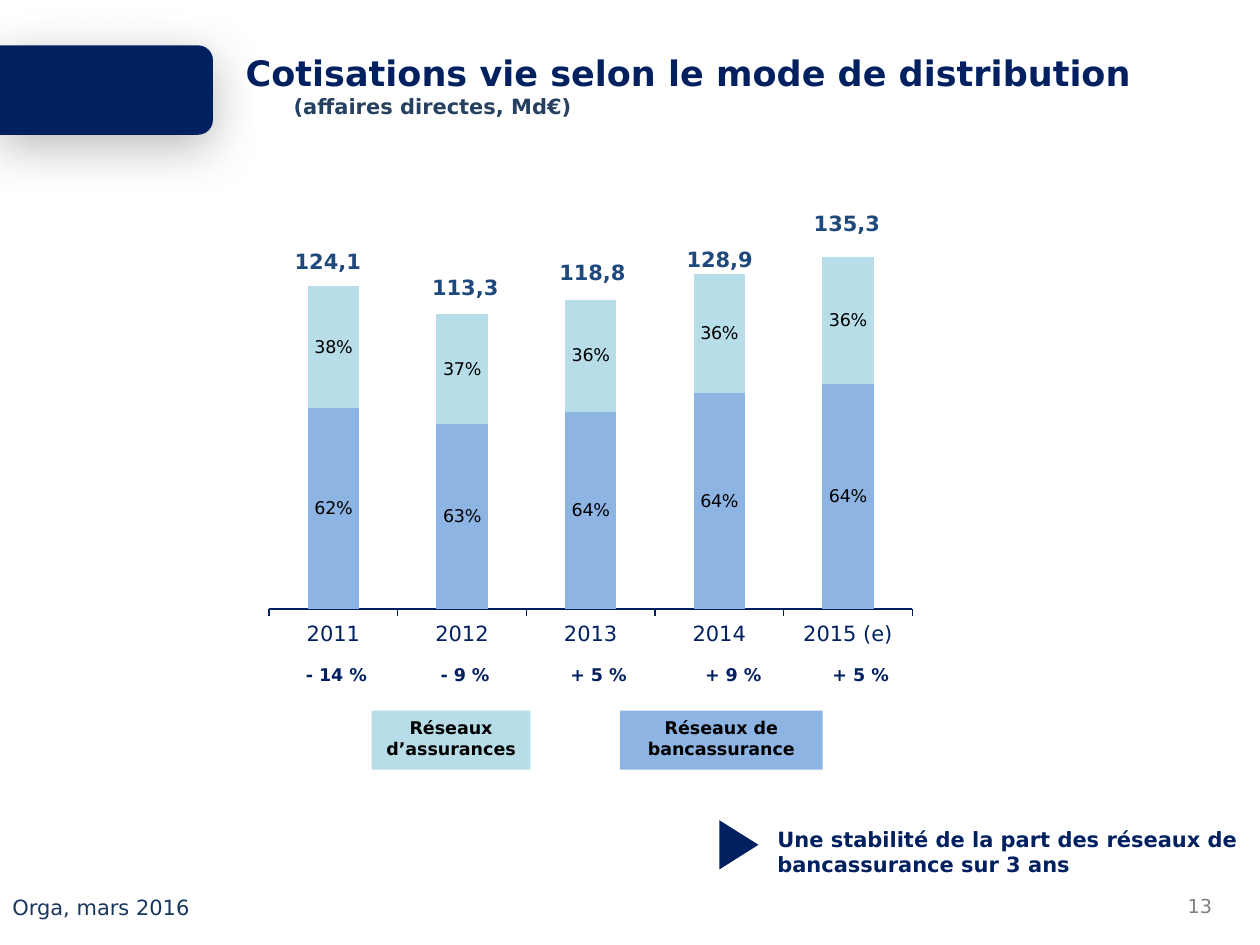
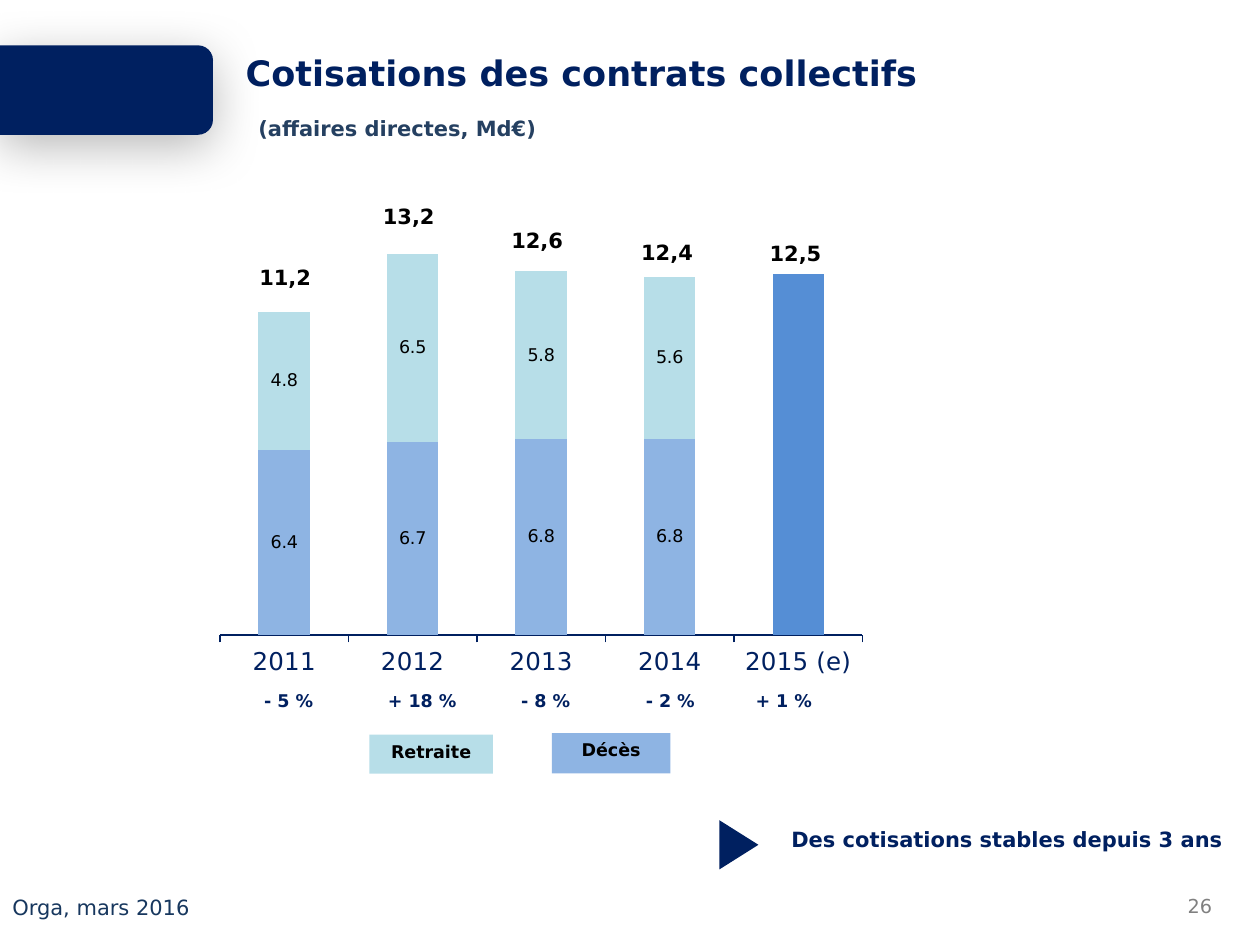
from lxml import etree
from pptx import Presentation
from pptx import util as u
from pptx.chart import data as chart_data
from pptx.dml.color import RGBColor
from pptx.enum import chart as charts, shapes, text
from pptx.oxml import ns, parse_xml

Pt = u.Pt

# ---- Shared content and style ----
FONT = "DejaVu Sans"
FOOTER = "Orga, mars 2016"
SUBTITLE = "(affaires directes, Md€)"
YEARS = ["2011", "2012", "2013", "2014", "2015 (e)"]
COLOURS = {
    "navy": "002060", "subtitle": "254061", "footer": "17375E", "number": "808080",
    "total": "1F497D", "black": "000000", "lower": "8EB4E3", "upper": "B7DEE8",
    "estimate": "558ED5",
}
STYLES = {
    "title": {"size": 20, "bold": True, "colour": "navy"},
    "subtitle": {"size": 12, "bold": True, "colour": "subtitle"},
    "takeaway": {"size": 12, "bold": True, "colour": "navy"},
    "growth": {"size": 10, "bold": True, "colour": "navy"},
    "legend": {"size": 10, "bold": True, "colour": "black"},
    "label": {"size": 10, "bold": False, "colour": "black"},
    "footer": {"size": 12, "bold": False, "colour": "footer"},
    "number": {"size": 11, "bold": False, "colour": "number"},
}

# ---- Slide content; boxes are left, top, width, height in points ----
SLIDES = [
    {
        "title": "Cotisations vie selon le mode de distribution",
        "subtitle_indent": 27.4, "subtitle_gap": 0,
        "number": "13",
        "chart_box": (153.4, 104.4, 375.8, 324),
        "plot_area": {"x": 0, "y": 0.018, "w": 0.979, "h": 0.734},
        "axis_max": 160, "axis_size": 12,
        "lower": [77.1, 71, 75.8, 83, 86.4],
        "upper": [47, 42.3, 43, 45.9, 48.9],
        "shares": {"lower": ["62%", "63%", "64%", "64%", "64%"],
                   "upper": ["38%", "37%", "36%", "36%", "36%"]},
        "total_colour": "total", "indent": 0,
        "totals": [("124,1", 161.3, 138.2), ("113,3", 239.8, 153.4), ("118,8", 312.5, 144.7),
                   ("128,9", 385.2, 137.5), ("135,3", 457.9, 116.6)],
        "growth_top": 375.8,
        "growth": [("- 14 %", 192.2), ("- 9 %", 265.7), ("+ 5 %", 342),
                   ("+ 9 %", 419), ("+ 5 %", 491.8)],
        "legend": [("Réseaux d’assurances", "upper", (212.4, 406.1, 90.7, 33.8)),
                   ("Réseaux de bancassurance", "lower", (354.2, 406.1, 115.9, 33.8))],
        "takeaway": "Une stabilité de la part des réseaux de bancassurance sur 3 ans",
        "takeaway_box": (437, 468.7, 280.1, 39.6),
    },
    {
        "title": "Cotisations des contrats collectifs",
        "subtitle_indent": 7.2, "subtitle_gap": 12.6,
        "number": "26",
        "chart_box": (124.6, 111.6, 368.6, 324.7),
        "plot_area": {"x": 0.003, "y": 0.063, "w": 0.997, "h": 0.711},
        "axis_max": 14, "axis_size": 14,
        "lower": [6.4, 6.7, 6.8, 6.8, 12.5],
        "upper": [4.8, 6.5, 5.8, 5.6, None],
        "estimate": 4,
        "total_colour": "black", "indent": 13.7,
        "totals": [("11,2", 127.4, 147.6), ("13,2", 198, 113), ("12,6", 271.4, 126.7),
                   ("12,4", 345.6, 133.2), ("12,5", 419, 133.9)],
        "growth_top": 391,
        "growth": [("- 5 %", 164.9), ("+ 18 %", 241.2), ("- 8 %", 311.8),
                   ("- 2 %", 383), ("+ 1 %", 447.8)],
        "legend": [("Retraite", "upper", (211, 419.8, 70.6, 22.3)),
                   ("Décès", "lower", (315.4, 419, 67.7, 23))],
        "takeaway": "Des cotisations stables depuis 3 ans",
        "takeaway_box": (431.3, 468.7, 313.2, 39.6),
    },
]


# ---- Helpers ----
def rgb(name):
    return RGBColor.from_string(COLOURS[name])


def apply(target, values):
    for attribute, value in values.items():
        setattr(target, attribute, value)


def set_font(font, size, bold, colour):
    apply(font, {"name": FONT, "size": Pt(size), "bold": bold})
    font.color.rgb = rgb(colour)


def place(part, box):
    apply(part, dict(zip(("left", "top", "width", "height"), map(Pt, box))))


def write(frame, lines, anchor=text.MSO_ANCHOR.TOP, align=text.PP_ALIGN.LEFT):
    """Each line is (wording, style, indent, space before)."""
    apply(frame, {"word_wrap": True, "auto_size": text.MSO_AUTO_SIZE.NONE,
                  "vertical_anchor": anchor})
    for position, (wording, style, indent, gap) in enumerate(lines):
        paragraph = frame.add_paragraph() if position else frame.paragraphs[0]
        apply(paragraph, {"alignment": align, "space_before": Pt(gap)})
        run = paragraph.add_run()
        run.text = wording
        set_font(run.font, **style)
        properties = paragraph._p.get_or_add_pPr()
        properties.set("marL", str(Pt(indent)))
        properties.set("indent", "0")
        etree.SubElement(properties, ns.qn("a:buNone"))


def add_text(slide, box, wording, style, indent=0, **layout):
    frame = slide.shapes.add_textbox(*map(Pt, box)).text_frame
    write(frame, [(wording, style, indent, 0)], **layout)


def add_block(slide, kind, box, colour, rotation=0):
    block = slide.shapes.add_shape(kind, *map(Pt, box))
    block.shadow.inherit = False
    block.fill.solid()
    block.fill.fore_color.rgb = rgb(colour)
    block.line.fill.background()
    block.rotation = rotation
    return block


# ---- Title, band, marker and footer of every slide ----
def add_frame(slide, content):
    title = slide.shapes.title
    place(title, (133.2, 25.9, 552, 56.9))
    write(title.text_frame, [
        (content["title"], STYLES["title"], 0, 0),
        (SUBTITLE, STYLES["subtitle"], content["subtitle_indent"], content["subtitle_gap"]),
    ])
    band = add_block(slide, shapes.MSO_SHAPE.ROUND_2_SAME_RECTANGLE,
                     (35.3, -9.4, 51.1, 121.7), "navy", 90)
    effects = band._element.spPr.find(ns.qn("a:effectLst"))
    shadow = etree.SubElement(effects, ns.qn("a:outerShdw"), blurRad=str(Pt(29)),
                              dist=str(Pt(7)), dir="5400000", rotWithShape="0")
    shade = etree.SubElement(shadow, ns.qn("a:srgbClr"), val=COLOURS["black"])
    etree.SubElement(shade, ns.qn("a:alpha"), val="28000")
    add_block(slide, shapes.MSO_SHAPE.ISOSCELES_TRIANGLE, (408.2, 471.6, 28.1, 22.3), "navy", 90)
    add_text(slide, (0, 496.8, 496, 43.2), FOOTER, STYLES["footer"],
             anchor=text.MSO_ANCHOR.MIDDLE)
    add_text(slide, (635.8, 508.3, 64, 18), content["number"], STYLES["number"],
             anchor=text.MSO_ANCHOR.MIDDLE, align=text.PP_ALIGN.RIGHT)


# ---- Stacked columns ----
def set_plot_area(chart, area):
    plot_area = chart._chartSpace.chart.plotArea
    for old in plot_area.findall(ns.qn("c:layout")):
        plot_area.remove(old)
    layout = etree.Element(ns.qn("c:layout"))
    manual = etree.SubElement(layout, ns.qn("c:manualLayout"))
    settings = [("layoutTarget", "inner"), ("xMode", "edge"), ("yMode", "edge"), *area.items()]
    for tag, value in settings:
        etree.SubElement(manual, ns.qn("c:" + tag), val=str(value))
    plot_area.insert(0, layout)


def add_columns(slide, content):
    figures = chart_data.CategoryChartData()
    figures.categories = YEARS
    for number, level in enumerate(("lower", "upper"), 1):
        figures.add_series(f"Series {number}", content[level])
    chart = slide.shapes.add_chart(charts.XL_CHART_TYPE.COLUMN_STACKED,
                                   *map(Pt, content["chart_box"]), figures).chart
    apply(chart, {"has_legend": False, "has_title": False})
    set_font(chart.font, **STYLES["label"])
    set_plot_area(chart, content["plot_area"])

    apply(chart.value_axis, {"minimum_scale": 0, "maximum_scale": content["axis_max"],
                             "has_major_gridlines": False, "visible": False})
    years = chart.category_axis
    apply(years, {"major_tick_mark": charts.XL_TICK_MARK.OUTSIDE,
                  "tick_label_position": charts.XL_TICK_LABEL_POSITION.LOW})
    set_font(years.tick_labels.font, content["axis_size"], False, "navy")
    years.format.line.color.rgb = rgb("navy")
    years.format.line.width = Pt(0.75)

    plot = chart.plots[0]
    apply(plot, {"gap_width": 150, "overlap": 100, "vary_by_categories": False})
    for series, level in zip(plot.series, ("lower", "upper")):
        series.format.fill.solid()
        series.format.fill.fore_color.rgb = rgb(level)
        labels = series.data_labels
        apply(labels, {"show_value": True, "number_format": "#,##0.0",
                       "number_format_is_linked": False})
        set_font(labels.font, **STYLES["label"])
        for point, share in enumerate(content.get("shares", {}).get(level, [])):
            run = series.points[point].data_label.text_frame.paragraphs[0].add_run()
            run.text = share
            set_font(run.font, **STYLES["label"])

    # The estimated year is one undivided, unlabelled column
    if "estimate" in content:
        lower = plot.series[0]
        fill = lower.points[content["estimate"]].format.fill
        fill.solid()
        fill.fore_color.rgb = rgb("estimate")
        lower.data_labels._element.insert(0, parse_xml(
            f'<c:dLbl {ns.nsdecls("c")}><c:idx val="{content["estimate"]}"/>'
            '<c:delete val="1"/></c:dLbl>'))


# ---- Totals, growth, legend and takeaway ----
def add_annotations(slide, content):
    total_style = {"size": 12, "bold": True, "colour": content["total_colour"]}
    for total, left, top in content["totals"]:
        add_text(slide, (left, top, 73, 24), total, total_style, content["indent"])
    for rate, centre in content["growth"]:
        add_text(slide, (centre - 35, content["growth_top"], 70, 22.3), rate,
                 STYLES["growth"], align=text.PP_ALIGN.CENTER)
    for network, colour, box in content["legend"]:
        key = add_block(slide, shapes.MSO_SHAPE.RECTANGLE, box, colour)
        write(key.text_frame, [(network, STYLES["legend"], 0, 0)], align=text.PP_ALIGN.CENTER)
    takeaway = slide.placeholders[1]
    place(takeaway, content["takeaway_box"])
    write(takeaway.text_frame,
          [(content["takeaway"], STYLES["takeaway"], content["indent"], 0)])


def main():
    deck = Presentation()
    apply(deck, {"slide_width": Pt(720), "slide_height": Pt(540)})
    for content in SLIDES:
        slide = deck.slides.add_slide(deck.slide_layouts[1])
        add_frame(slide, content)
        add_columns(slide, content)
        add_annotations(slide, content)
    deck.save("out.pptx")


if __name__ == "__main__":
    main()
